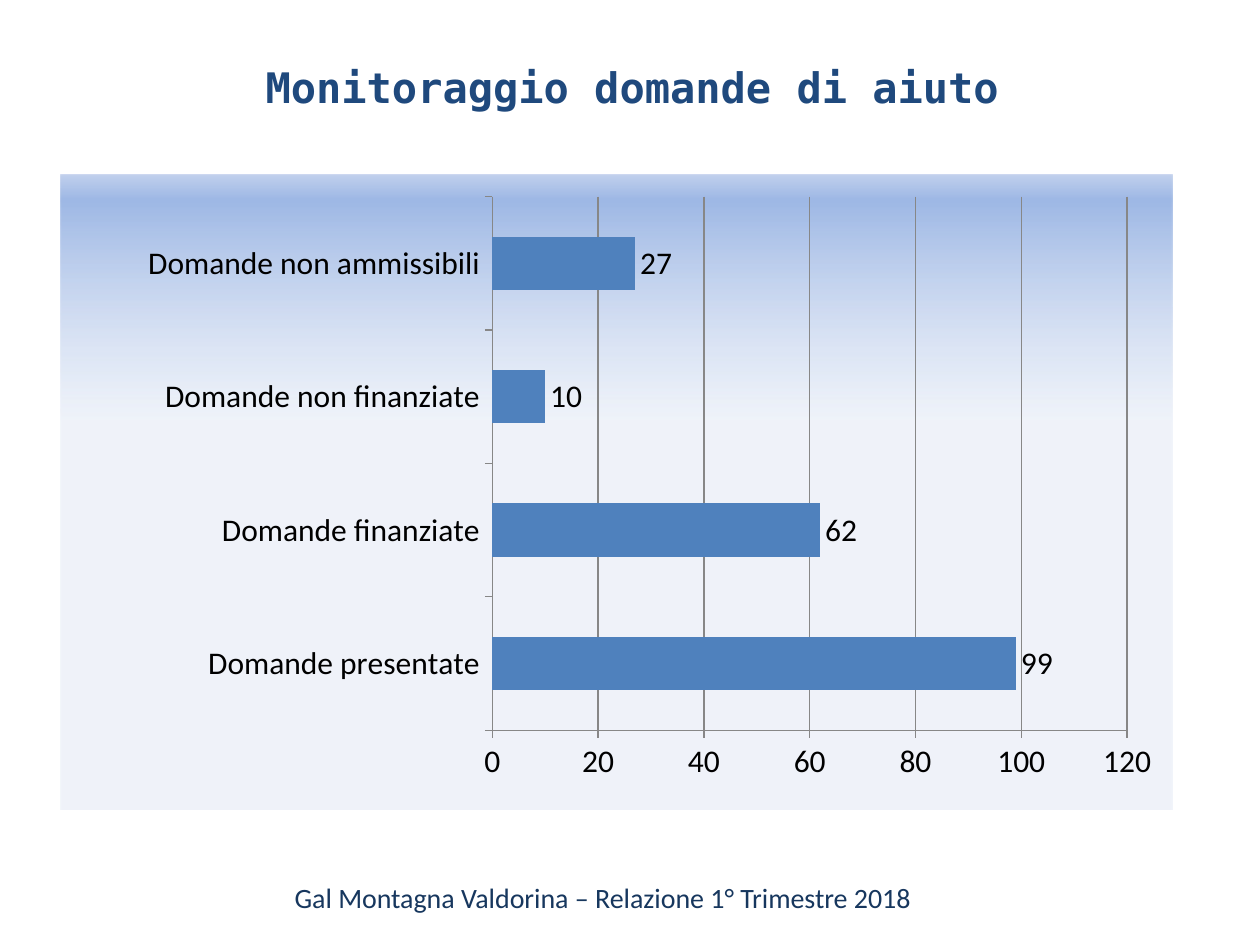
import lxml.etree
import pptx
import pptx.chart.data
import pptx.dml.color
import pptx.enum.chart
import pptx.enum.text
import pptx.oxml
import pptx.oxml.ns
import pptx.util

Cm = pptx.util.Cm
Pt = pptx.util.Pt
RGBColor = pptx.dml.color.RGBColor

NAVY = RGBColor(0x1F, 0x49, 0x7D)
DARK_NAVY = RGBColor(0x17, 0x37, 0x5E)
BAR_BLUE = RGBColor(0x4F, 0x81, 0xBD)
AXIS_GREY = RGBColor(0x87, 0x87, 0x87)
BLACK = RGBColor(0, 0, 0)
SKY = RGBColor(0xC2, 0xD1, 0xED)
BLUE_BAND = RGBColor(0x9E, 0xB8, 0xE5)
PALE = RGBColor(0xE1, 0xE8, 0xF5)

BACKDROP_STOPS = [(0, SKY, 100), (4, BLUE_BAND, 100), (39, PALE, 50)]
PLOT_AREA = {"x": 0.388, "y": 0.034, "w": 0.571, "h": 0.841}
REQUESTS = {
    "Domande presentate": 99,
    "Domande finanziate": 62,
    "Domande non finanziate": 10,
    "Domande non ammissibili": 27,
}


def add_span(para, text, font_name, size, color, bold=False):
    span = para.add_run()
    span.text = text
    span.font.name = font_name
    span.font.size = Pt(size)
    span.font.bold = bold
    span.font.color.rgb = color


def set_title(page, text):
    box = page.shapes.title
    box.left, box.top, box.width, box.height = Cm(1.24), Cm(1.12), Cm(23.01), Cm(1.27)
    box.text_frame.vertical_anchor = pptx.enum.text.MSO_ANCHOR.MIDDLE
    para = box.text_frame.paragraphs[0]
    para.alignment = pptx.enum.text.PP_ALIGN.CENTER
    add_span(para, text, "DejaVu Sans Mono", 24, NAVY, bold=True)


def add_footer(page, text):
    box = page.shapes.add_textbox(Cm(5.69), Cm(17.63), Cm(13.06), Cm(0.94))
    box.text_frame.word_wrap = False
    add_span(box.text_frame.paragraphs[0], text, "Calibri", 16, DARK_NAVY)


def fill_backdrop(chart, stops):
    stop_xml = "".join(
        f'<a:gs pos="{position * 1000}"><a:srgbClr val="{color}">'
        f'<a:alpha val="{opacity * 1000}"/></a:srgbClr></a:gs>'
        for position, color, opacity in stops
    )
    properties = pptx.oxml.parse_xml(
        f'<c:spPr {pptx.oxml.ns.nsdecls("c", "a")}>'
        f'<a:gradFill><a:gsLst>{stop_xml}</a:gsLst><a:lin ang="5400000" scaled="0"/></a:gradFill>'
        "<a:ln><a:noFill/></a:ln></c:spPr>"
    )
    chart.element.find(pptx.oxml.ns.qn("c:chart")).addnext(properties)


def place_plot(chart, area):
    qn = pptx.oxml.ns.qn
    plot_area = chart.element.find(qn("c:chart")).find(qn("c:plotArea"))
    for layout in plot_area.findall(qn("c:layout")):
        plot_area.remove(layout)
    layout = lxml.etree.Element(qn("c:layout"))
    manual = lxml.etree.SubElement(layout, qn("c:manualLayout"))
    settings = {"layoutTarget": "inner", "xMode": "edge", "yMode": "edge", **area}
    for name, value in settings.items():
        lxml.etree.SubElement(manual, qn(f"c:{name}")).set("val", str(value))
    plot_area.insert(0, layout)


def style_line(line):
    line.color.rgb = AXIS_GREY
    line.width = Pt(0.75)


def style_axes(chart):
    for axis in (chart.category_axis, chart.value_axis):
        axis.major_tick_mark = pptx.enum.chart.XL_TICK_MARK.OUTSIDE
        axis.minor_tick_mark = pptx.enum.chart.XL_TICK_MARK.NONE
        style_line(axis.format.line)
    scale = chart.value_axis
    scale.minimum_scale, scale.maximum_scale, scale.major_unit = 0, 120, 20
    scale.has_major_gridlines = True
    style_line(scale.major_gridlines.format.line)


def style_bars(plot):
    plot.gap_width = 150
    plot.vary_by_categories = False
    fill = plot.series[0].format.fill
    fill.solid()
    fill.fore_color.rgb = BAR_BLUE
    plot.has_data_labels = True
    plot.data_labels.show_value = True
    plot.data_labels.position = pptx.enum.chart.XL_LABEL_POSITION.OUTSIDE_END


def add_bar_chart(page, values):
    data = pptx.chart.data.CategoryChartData()
    data.categories = list(values)
    data.add_series("Series 1", list(values.values()))
    chart = page.shapes.add_chart(
        pptx.enum.chart.XL_CHART_TYPE.BAR_CLUSTERED,
        Cm(1.23), Cm(3.53), Cm(22.41), Cm(12.79), data,
    ).chart
    chart.has_title = False
    chart.has_legend = False
    chart.font.name = "Calibri"
    chart.font.size = Pt(18)
    chart.font.color.rgb = BLACK
    style_axes(chart)
    style_bars(chart.plots[0])
    place_plot(chart, PLOT_AREA)
    fill_backdrop(chart, BACKDROP_STOPS)


def main():
    deck = pptx.Presentation()
    deck.slide_width, deck.slide_height = Cm(25.4), Cm(19.05)
    page = deck.slides.add_slide(deck.slide_layouts.get_by_name("Title Only"))
    add_bar_chart(page, REQUESTS)
    set_title(page, "Monitoraggio domande di aiuto")
    add_footer(page, "Gal Montagna Valdorina – Relazione 1° Trimestre 2018")
    deck.save("out.pptx")


if __name__ == "__main__":
    main()
